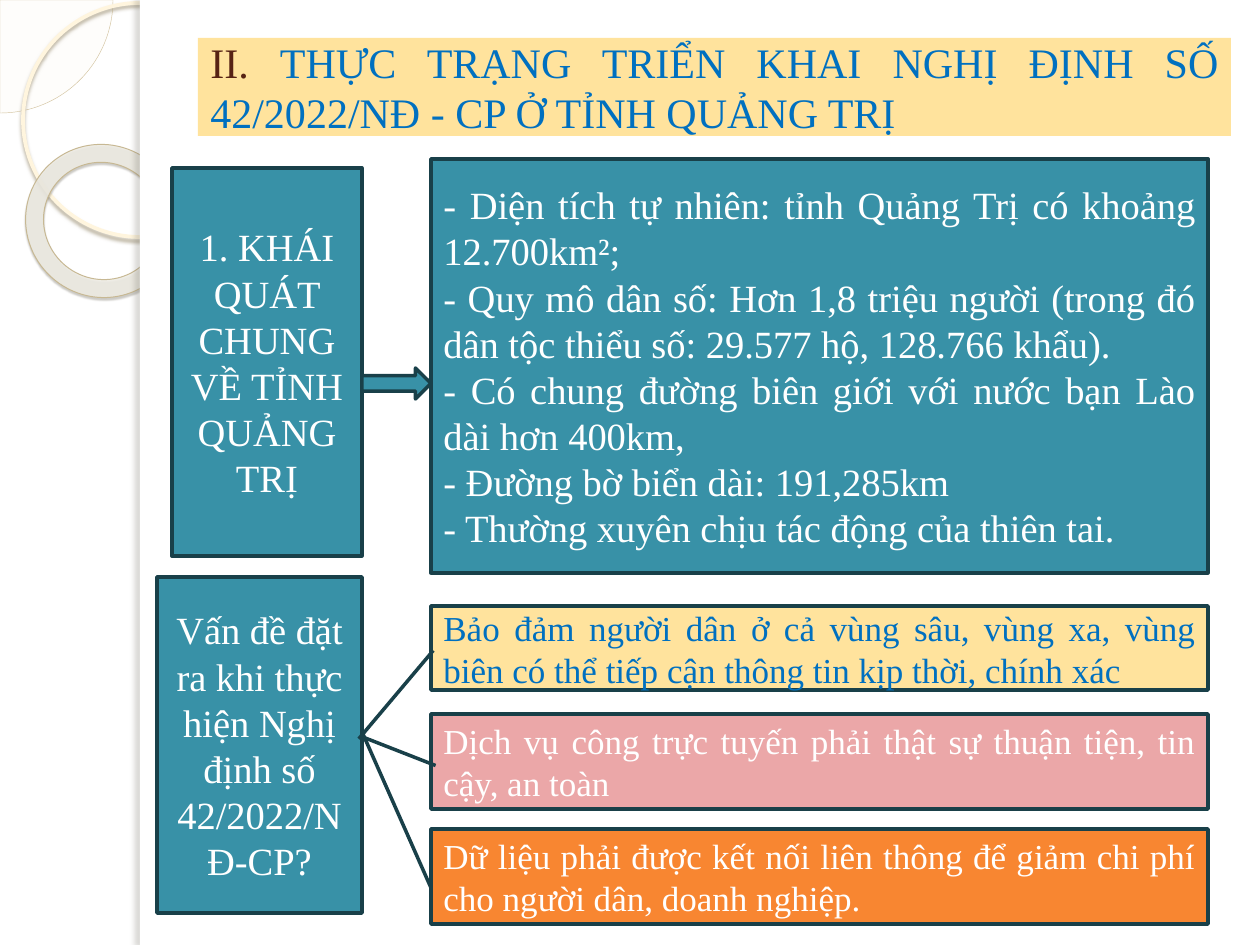
from lxml import etree
from pptx import Presentation
from pptx import util as u
from pptx.dml.color import RGBColor
from pptx.enum import shapes, text
from pptx.oxml.ns import qn

PX = 914400 / 126
FONT = "Times New Roman"
C = {
    "white": "FFFFFF", "teal": "3891A7", "edge": "194049", "cream": "FFE39D",
    "pink": "EBA7A8", "orange": "F88631", "blue": "0070C0", "brown": "572314",
    "pie": "FEFAF4", "pie_edge": "D3C39F", "ring": "FFF5DE", "donut": "EEECE4",
    "donut_edge": "C7B893", "ring_shade": "B0A68F", "donut_shade": "5A5444",
    "strip_shade": "736F63",
}
KIND = shapes.MSO_SHAPE
ALIGN = text.PP_ALIGN
FACTS = [
    "- Diện tích tự nhiên: tỉnh Quảng Trị có khoảng 12.700km²;",
    "- Quy mô dân số: Hơn 1,8 triệu người (trong đó dân tộc thiểu số: 29.577 hộ, 128.766 khẩu).",
    "- Có chung đường biên giới với nước bạn Lào dài hơn 400km,",
    "- Đường bờ biển dài: 191,285km",
    "- Thường xuyên chịu tác động của thiên tai.",
]
CALLOUTS = [
    (606, 84, "cream", "blue", (0.53, 0.003, 1.582, -0.093),
     "Bảo đảm người dân ở cả vùng sâu, vùng xa, vùng biên có thể tiếp cận thông tin kịp thời, chính xác"),
    (714, 95, "pink", "white", (0.543, 0.006, 0.236, -0.09),
     "Dịch vụ công trực tuyến phải thật sự thuận tiện, tin cậy, an toàn"),
    (829, 95, "orange", "white", (0.619, 0, -1.008, -0.088),
     "Dữ liệu phải được kết nối liên thông để giảm chi phí cho người dân, doanh nghiệp."),
]


def rgb(name):
    return RGBColor.from_string(C[name])


def add_alpha(color, percent):
    etree.SubElement(color, qn("a:alpha"), val=str(percent * 1000))


def add_shape(s, kind, box, fill=None, line=None, width=2, adj=()):
    sp = s.shapes.add_shape(kind, *(round(v * PX) for v in box))
    sp.shadow.inherit = False
    for i, value in enumerate(adj):
        sp.adjustments[i] = value
    if fill:
        sp.fill.solid()
        sp.fill.fore_color.rgb = rgb(fill)
    else:
        sp.fill.background()
    if line:
        sp.line.color.rgb = rgb(line)
        sp.line.width = u.Pt(width)
    else:
        sp.line.fill.background()
    return sp


def fade(sp, percent):
    add_alpha(sp._element.spPr.find(qn("a:solidFill"))[0], percent)


def add_shadow(sp, color, percent, blur, dist, angle):
    effects = sp._element.spPr.find(qn("a:effectLst"))
    shade = etree.SubElement(
        effects, qn("a:outerShdw"), blurRad=str(u.Pt(blur)), dist=str(u.Pt(dist)),
        dir=str(angle * 60000), algn="tl", rotWithShape="0")
    add_alpha(etree.SubElement(shade, qn("a:srgbClr"), val=C[color]), percent)


def style_run(r, size, color):
    r.font.name = FONT
    r.font.size = u.Pt(size)
    r.font.color.rgb = rgb(color)


def write(sp, lines, size, color, align=ALIGN.JUSTIFY):
    tf = sp.text_frame
    tf.word_wrap = True
    tf.vertical_anchor = text.MSO_ANCHOR.MIDDLE
    tf.text = "\n".join(lines)
    for p in tf.paragraphs:
        p.alignment = align
        for r in p.runs:
            style_run(r, size, color)
    return tf


def add_decoration(s):
    pie = add_shape(s, KIND.PIE, (-113, -113, 226, 226), "pie", "pie_edge", 0.25, (0, 54.02))
    fade(pie, 33)
    ring = add_shape(s, KIND.OVAL, (23, 3, 234, 234), None, "ring", 2.15)
    add_shadow(ring, "ring_shade", 85, 2, 2, 90)
    donut = add_shape(s, KIND.DONUT, (25, 145, 155, 152), "donut", "donut_edge", 0.58, (0.118,))
    donut.rotation = 38.6
    fade(donut, 85)
    add_shadow(donut, "donut_shade", 35, 1, 1.2, 75)
    add_shape(s, KIND.RECTANGLE, (140, 0, 1120, 945), "white")
    strip = add_shape(s, KIND.RECTANGLE, (140, 0, 10, 945), "white")
    add_shadow(strip, "strip_shade", 25, 3, 3, 180)


def add_title(s):
    sp = add_shape(s, KIND.RECTANGLE, (198, 38, 1033, 98), "cream")
    tf = write(sp, ["II. "], 24, "brown")
    r = tf.paragraphs[0].add_run()
    r.text = "THỰC TRẠNG TRIỂN KHAI NGHỊ ĐỊNH SỐ 42/2022/NĐ - CP Ở TỈNH QUẢNG TRỊ"
    style_run(r, 24, "blue")


def add_panel(s, box, lines, align):
    sp = add_shape(s, KIND.RECTANGLE, box, "teal", "edge")
    write(sp, lines, 22, "white", align)


def add_callout(s, top, height, fill, color, adj, line):
    sp = add_shape(s, KIND.LINE_CALLOUT_1, (431, top, 777, height), fill, "edge", adj=adj)
    write(sp, [line], 20, color)


def main():
    prs = Presentation()
    prs.slide_width, prs.slide_height = u.Inches(10), u.Inches(7.5)
    s = prs.slides.add_slide(prs.slide_layouts[6])
    add_decoration(s)
    add_title(s)
    add_panel(s, (172, 168, 190, 388), ["1. KHÁI QUÁT CHUNG VỀ TỈNH QUẢNG TRỊ"], ALIGN.CENTER)
    add_panel(s, (431, 159, 777, 414), FACTS, ALIGN.JUSTIFY)
    add_panel(s, (157, 577, 205, 336),
              ["Vấn đề đặt ra khi thực hiện Nghị định số 42/2022/NĐ-CP?"], ALIGN.CENTER)
    add_shape(s, KIND.RIGHT_ARROW, (362, 368, 69, 31), "teal", "edge")
    for callout in CALLOUTS:
        add_callout(s, *callout)
    prs.save("out.pptx")


if __name__ == "__main__":
    main()
